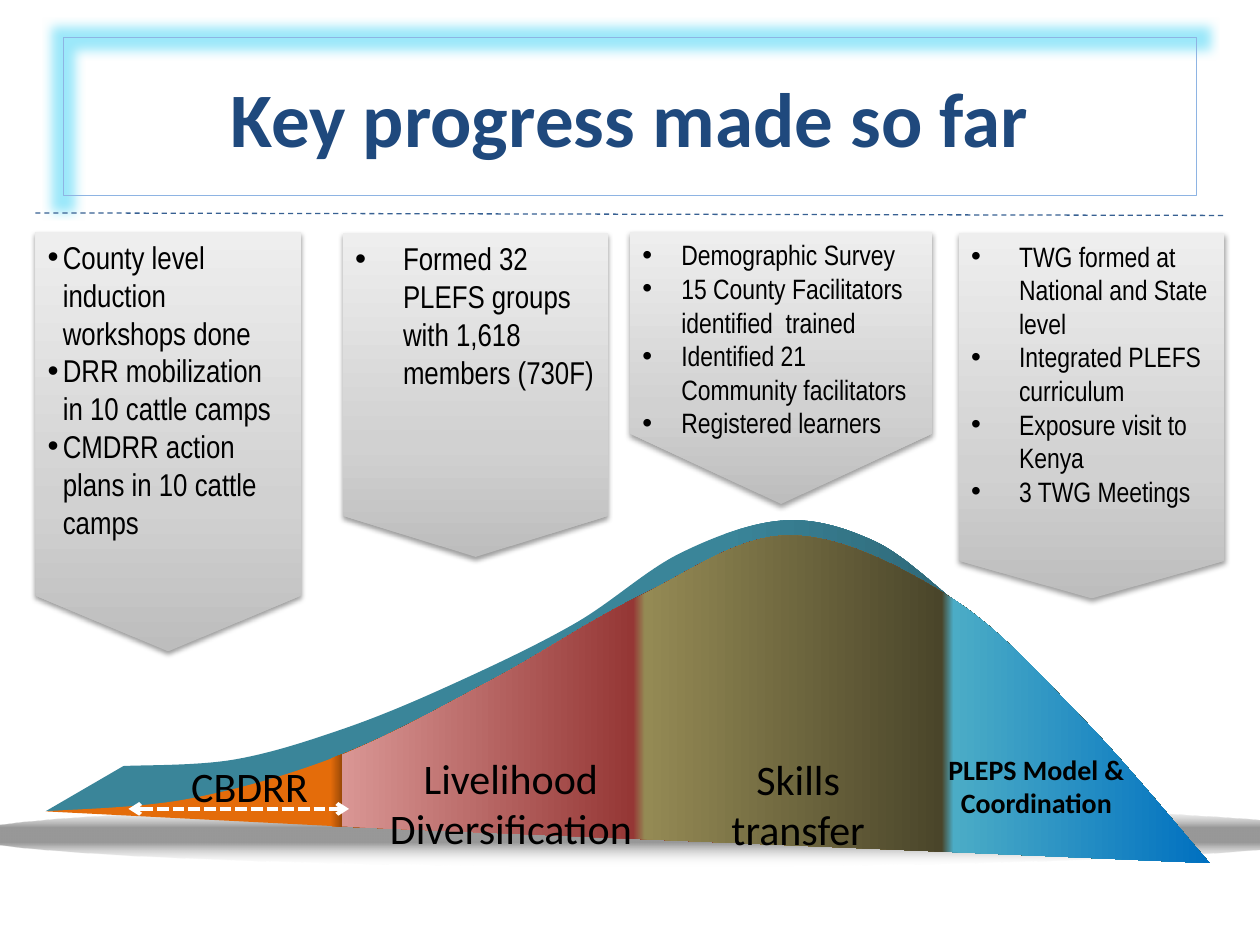
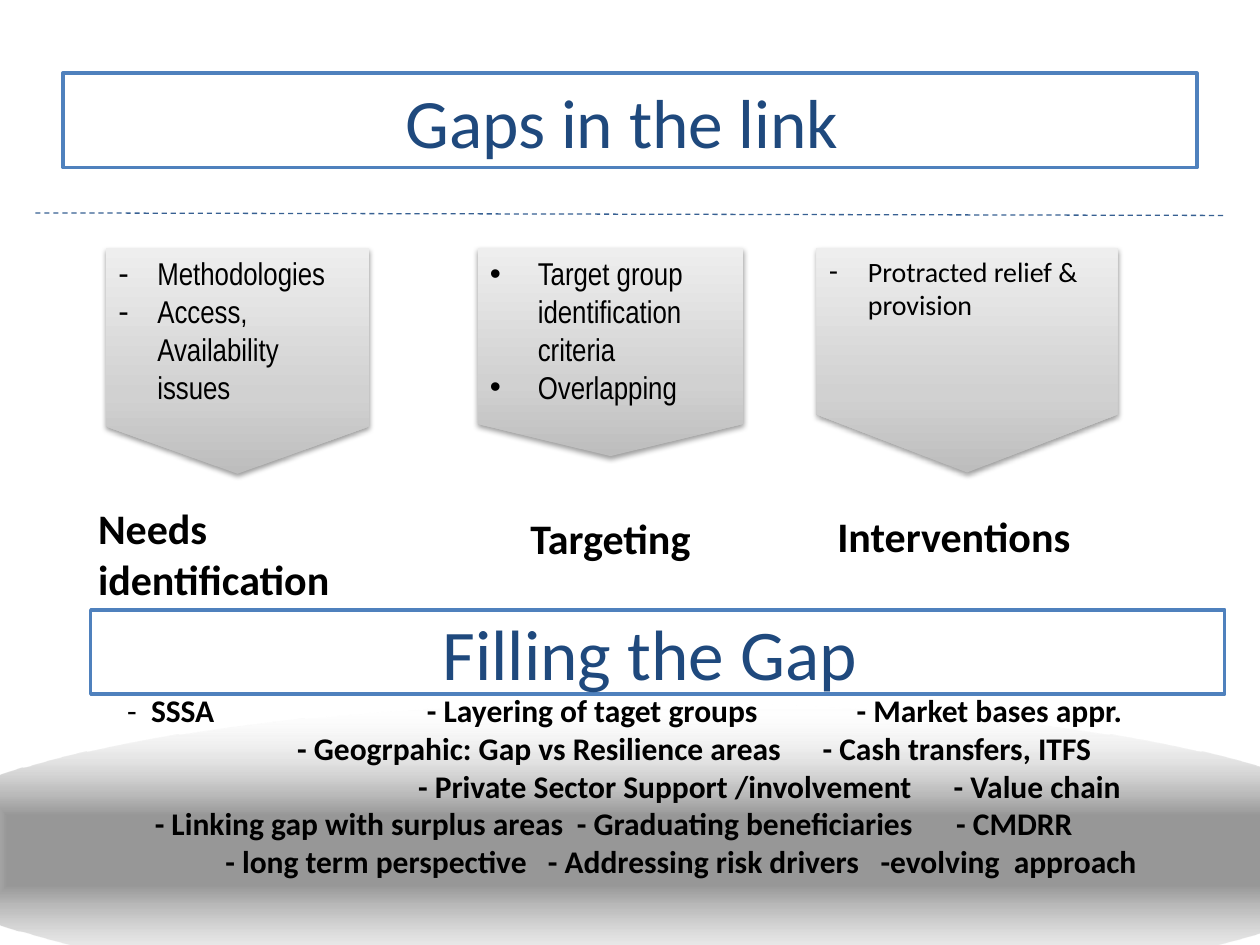
"""Build two slides on progress made and gaps in the link."""
import pptx
import pptx.util
import pptx.oxml
import pptx.oxml.ns
import pptx.dml.color
import pptx.enum.dml
import pptx.enum.shapes
import pptx.enum.text
from dataclasses import dataclass
from pptx.util import Inches

NS = 'xmlns:a="http://schemas.openxmlformats.org/drawingml/2006/main"'
SHAPE = pptx.enum.shapes.MSO_SHAPE
DASH = pptx.enum.dml.MSO_LINE
ALIGN = pptx.enum.text.PP_ALIGN
ANCHOR = pptx.enum.text.MSO_ANCHOR


@dataclass(frozen=True)
class Theme:
    body: str = "Calibri"
    slim: str = "Arial Narrow"
    ink: str = "000000"
    navy: str = "1F497D"
    edge: str = "4F81BD"
    pale: str = "8EB4E3"
    rule: str = "376092"
    white: str = "FFFFFF"
    glow: str = "9CE8FA"
    teal: str = "3A8599"
    deep: str = "2F6878"
    head: float = 44
    label: float = 24
    text: float = 18
    small: float = 16
    arrow: tuple = ((0, "BDBDBD", 100), (35, "D1D1D1", 100), (100, "EEEEEE", 100))
    shade: tuple = ((24, "000000", 40), (100, "FFFFFF", 0))
    hill: tuple = ((0, "E46C0A", 100), (24.5, "E46C0A", 100), (25.5, "984807", 100),
                   (25.5, "D99694", 100), (50.5, "953735", 100), (51.5, "948A54", 100),
                   (77, "4A452A", 100), (78, "4BACC6", 100), (100, "0070C0", 100))


T = Theme()

# box, tip, bullet, indent, font, size, items
DONE = [
    ((2.72, 1.85, 2.11, 2.57), 0.155, "•", 0.38, T.slim, T.text,
     ["Formed 32 PLEFS groups with 1,618 members (730F)"]),
    ((5, 1.84, 2.4, 2.16), 0.259, "•", 0.31, T.slim, T.small,
     ["Demographic Survey", "15 County Facilitators identified  trained",
      "Identified 21 Community facilitators", "Registered learners"]),
    ((7.61, 1.85, 2.11, 2.9), 0.142, "•", 0.38, T.slim, T.small,
     ["TWG formed at National and State level", "Integrated PLEFS curriculum",
      "Exposure visit to Kenya", "3 TWG Meetings"]),
    ((0.28, 1.84, 2.11, 3.33), 0.21, "•", 0.12, T.slim, T.text,
     ["County level induction workshops done", "DRR mobilization in 10 cattle camps",
      "CMDRR action plans in 10 cattle camps"]),
]
GAPS = [
    ((3.79, 1.97, 2.11, 1.65), 0.155, "•", 0.38, T.slim, T.text,
     ["Target group identification criteria", "Overlapping"]),
    ((6.48, 1.97, 2.39, 1.78), 0.259, "-", 0.31, T.body, T.small,
     ["Protracted relief & provision"]),
    ((0.84, 1.97, 2.09, 1.79), 0.21, "-", 0.31, T.slim, T.text,
     ["Methodologies", "Access, Availability issues"]),
]
# box, words, size, bold, align
PARTS = [
    ((1.02, 5.99, 1.92, 0.5), "CBDRR", T.label, False, ALIGN.CENTER),
    ((2.94, 5.92, 2.23, 0.91), "Livelihood Diversification", T.label, False, ALIGN.CENTER),
    ((5.5, 5.93, 1.67, 0.91), "Skills transfer", T.label, False, ALIGN.CENTER),
    ((7.39, 5.92, 1.67, 0.64), "PLEPS Model & Coordination", T.small, True, ALIGN.CENTER),
]
STEPS = [
    ((0.68, 3.94, 2.44, 0.91), "Needs identification", T.label, True, ALIGN.LEFT),
    ((3.73, 4.02, 2.23, 0.5), "Targeting", T.label, True, ALIGN.CENTER),
    ((6.48, 4, 2.18, 0.5), "Interventions", T.label, True, ALIGN.CENTER),
]
# each line: (place in inches from the left, words, bold)
LEFT = 1.01
FILL = [
    [(LEFT, "-", False), (1.2, "SSSA", True), (3.39, "- Layering of taget groups", True),
     (6.8, "- Market bases appr.", True)],
    [(2.36, "- Geogrpahic: Gap vs Resilience areas", True),
     (6.53, "- Cash transfers, ITFS", True)],
    [(3.32, "- Private Sector Support /involvement", True), (7.57, "- Value chain", True)],
    [(1.23, "- Linking gap with surplus areas", True),
     (4.58, "- Graduating beneficiaries", True), (7.59, "- CMDRR", True)],
    [(1.79, "- long term perspective", True), (4.35, "- Addressing risk drivers", True),
     (6.99, "-evolving  approach", True)],
]
FRONT = [(0.36, 6.44), (1.5, 6.34), (2.71, 5.99), (3.9, 5.4), (5.08, 4.73),
         (6.27, 4.25), (7.54, 4.74), (8.6, 5.71), (9.6, 6.85)]
BASE = [(7.5, 6.76), (2.71, 6.56)]
BACK = [(0.98, 6.08), (1.85, 6.03), (2.71, 5.79), (3.57, 5.44), (4.56, 4.95),
        (5.4, 4.39), (6.23, 4.13), (6.95, 4.3), (7.54, 4.74)]
UNDER = [(7.54, 5.08), (2.71, 6.4), (0.36, 6.44)]
FRAME = [(0.34, 0.14), (9.68, 0.14), (9.68, 0.48), (0.68, 0.48), (0.68, 1.75), (0.34, 1.75)]


def node(text):
    return pptx.oxml.parse_xml(text)


def name(tag):
    return pptx.oxml.ns.qn(tag)


def rgb(code):
    return pptx.dml.color.RGBColor.from_string(code)


def blend(shape, stops, way):
    shape.fill.gradient()
    old = shape.element.spPr.find(name("a:gradFill"))
    marks = "".join(
        f'<a:gs pos="{int(at * 1000)}"><a:srgbClr val="{code}">'
        f'<a:alpha val="{alpha * 1000}"/></a:srgbClr></a:gs>' for at, code, alpha in stops)
    old.getparent().replace(old, node(
        f'<a:gradFill {NS} rotWithShape="1"><a:gsLst>{marks}</a:gsLst>{way}</a:gradFill>'))


def slant(angle):
    return f'<a:lin ang="{angle * 60000}" scaled="0"/>'


def effect(shape, text):
    shape.element.spPr.find(name("a:effectLst")).append(node(text))


def plain(shape, fill=None, line=None, width=1):
    shape.shadow.inherit = False
    if fill:
        shape.fill.solid()
        shape.fill.fore_color.rgb = rgb(fill)
    else:
        shape.fill.background()
    if line:
        shape.line.color.rgb = rgb(line)
        shape.line.width = pptx.util.Pt(width)
    else:
        shape.line.fill.background()
    return shape


def form(slide, kind, box, **look):
    return plain(slide.shapes.add_shape(kind, *map(Inches, box)), **look)


def outline(slide, dots, **look):
    spots = [(Inches(x), Inches(y)) for x, y in dots]
    maker = slide.shapes.build_freeform(*spots[0], scale=1.0)
    maker.add_line_segments(spots[1:], close=True)
    return plain(maker.convert_to_shape(), **look)


def curve(slide, bend, rest):
    shape = outline(slide, bend + rest)
    legs = list(shape.element.spPr.iter(name("a:lnTo")))[:len(bend) - 1]
    spots = [(int(dot.get("x")), int(dot.get("y")))
             for dot in shape.element.spPr.iter(name("a:pt"))][:len(bend)]
    ends = [spots[0]] + spots + [spots[-1]]
    for leg, a, b, c, d in zip(legs, ends, ends[1:], ends[2:], ends[3:]):
        out = [q + (r - p) // 6 for p, q, r in zip(a, b, c)]
        back = [r - (s - q) // 6 for q, r, s in zip(b, c, d)]
        dots = "".join(f'<a:pt x="{x}" y="{y}"/>' for x, y in (out, back, c))
        leg.getparent().replace(leg, node(f'<a:cubicBezTo {NS}>{dots}</a:cubicBezTo>'))
    return shape


def write(para, words, size, font=T.body, color=T.ink, bold=False):
    run = para.add_run()
    run.text = words
    run.font.name = font
    run.font.size = pptx.util.Pt(size)
    run.font.bold = bold
    run.font.color.rgb = rgb(color)


def lines(frame, count):
    return [frame.paragraphs[0]] + [frame.add_paragraph() for _ in range(count - 1)]


def shade(slide, box):
    spot = form(slide, SHAPE.OVAL, box)
    blend(spot, T.shade, '<a:path path="shape">'
          '<a:fillToRect l="50000" t="50000" r="50000" b="50000"/></a:path>')
    return spot


def note(slide, box, tip, mark, indent, font, size, items):
    arrow = form(slide, SHAPE.DOWN_ARROW, box)
    arrow.adjustments[0], arrow.adjustments[1] = 1, tip
    blend(arrow, T.arrow, slant(270))
    effect(arrow, f'<a:outerShdw {NS} blurRad="39400" dist="20300" dir="5400000" '
           'rotWithShape="0"><a:srgbClr val="000000"><a:alpha val="38000"/>'
           '</a:srgbClr></a:outerShdw>')
    frame = arrow.text_frame
    frame.word_wrap = True
    frame.vertical_anchor = ANCHOR.TOP
    for para, words in zip(lines(frame, len(items)), items):
        para.alignment = ALIGN.LEFT
        props = para._p.get_or_add_pPr()
        props.set("marL", str(Inches(indent)))
        props.set("indent", str(-Inches(indent)))
        props.append(node(f'<a:buFont {NS} typeface="Arial"/>'))
        props.append(node(f'<a:buChar {NS} char="{mark}"/>'))
        write(para, words, size, font)


def label(slide, box, words, size, bold, align):
    frame = slide.shapes.add_textbox(*map(Inches, box)).text_frame
    frame.word_wrap = True
    frame.paragraphs[0].alignment = align
    write(frame.paragraphs[0], words, size, bold=bold)


def banner(slide, box, words, size, bold=False, **look):
    frame = form(slide, SHAPE.RECTANGLE, box, **look).text_frame
    frame.word_wrap = True
    frame.vertical_anchor = ANCHOR.MIDDLE
    frame.paragraphs[0].alignment = ALIGN.CENTER
    write(frame.paragraphs[0], words, size, color=T.navy, bold=bold)


def stroke(slide, start, end, color, width, dash, heads=False):
    line = slide.shapes.add_connector(
        pptx.enum.shapes.MSO_CONNECTOR.STRAIGHT, *map(Inches, start + end))
    line.line.color.rgb = rgb(color)
    line.line.width = pptx.util.Pt(width)
    line.line.dash_style = dash
    if heads:
        for tag in ("headEnd", "tailEnd"):
            line.line._get_or_add_ln().append(node(f'<a:{tag} {NS} type="arrow"/>'))
    line.element.spPr.append(node(f'<a:effectLst {NS}/>'))


def divide(slide):
    stroke(slide, (0.28, 1.69), (9.72, 1.71), T.rule, 0.75, DASH.DASH)


def hill(slide):
    rear = curve(slide, BACK, UNDER)
    blend(rear, ((0, T.teal, 100), (75, T.teal, 100), (100, T.deep, 100)), slant(0))
    blend(curve(slide, FRONT, BASE), T.hill, slant(0))


def remedy(spot):
    frame = spot.text_frame
    frame.word_wrap = True
    frame.vertical_anchor = ANCHOR.MIDDLE
    frame.margin_bottom = Inches(1.07)
    for para, row in zip(lines(frame, len(FILL)), FILL):
        para.alignment = ALIGN.LEFT
        stops = "".join(f'<a:tab pos="{Inches(at - LEFT)}" algn="l"/>'
                        for at, _, _ in row if at > LEFT)
        para._p.get_or_add_pPr().append(node(f'<a:tabLst {NS}>{stops}</a:tabLst>'))
        for at, words, bold in row:
            write(para, ("\t" if at > LEFT else "") + words, T.text, bold=bold)


def progress(slide):
    shade(slide, (-0.29, 6.38, 10.92, 0.5))
    for item in DONE:
        note(slide, *item)
    effect(outline(slide, FRAME, fill=T.glow), f'<a:softEdge {NS} rad="{Inches(0.08)}"/>')
    banner(slide, (0.5, 0.3, 9, 1.25), "Key progress made so far", T.head, True,
           line=T.pale, width=0.5)
    hill(slide)
    for part in PARTS:
        label(slide, *part)
    stroke(slide, (1.02, 6.42), (2.77, 6.42), T.white, 2.25, DASH.SQUARE_DOT, True)
    divide(slide)


def missing(slide):
    remedy(shade(slide, (-0.83, 5.58, 11.88, 2.33)))
    for item in GAPS:
        note(slide, *item)
    look = dict(fill=T.white, line=T.edge, width=2)
    banner(slide, (0.5, 0.58, 9, 0.75), "Gaps in the link ", 39.6, **look)
    for step in STEPS:
        label(slide, *step)
    divide(slide)
    banner(slide, (0.72, 4.84, 9, 0.67), "Filling the Gap ", 40.7, **look)


def main():
    deck = pptx.Presentation()
    deck.slide_width, deck.slide_height = Inches(10), Inches(7.5)
    for build in (progress, missing):
        build(deck.slides.add_slide(deck.slide_layouts[6]))
    deck.save("out.pptx")


if __name__ == "__main__":
    main()
